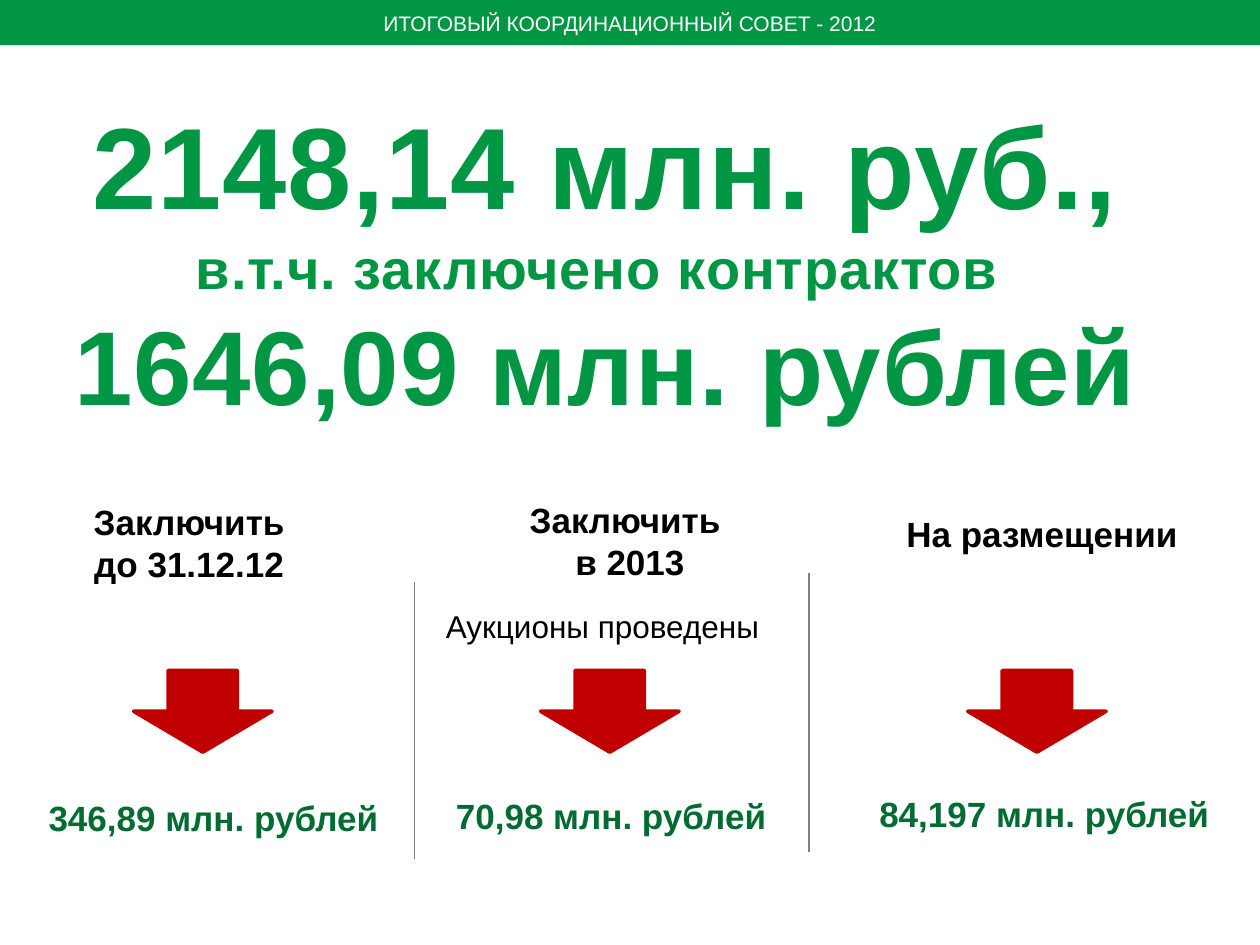
from lxml import etree
from pptx import Presentation
from pptx.dml.color import RGBColor
from pptx.enum.shapes import MSO_CONNECTOR, MSO_SHAPE
from pptx.enum.text import MSO_ANCHOR, MSO_AUTO_SIZE, PP_ALIGN
from pptx.oxml.ns import qn
from pptx.util import Inches, Pt

LEFT, CENTER = PP_ALIGN.LEFT, PP_ALIGN.CENTER
TOP, MIDDLE = MSO_ANCHOR.TOP, MSO_ANCHOR.MIDDLE
FIT_SHAPE, FIT_NONE = MSO_AUTO_SIZE.SHAPE_TO_FIT_TEXT, MSO_AUTO_SIZE.NONE
RECTANGLE, DOWN_ARROW = MSO_SHAPE.RECTANGLE, MSO_SHAPE.DOWN_ARROW
STRAIGHT = MSO_CONNECTOR.STRAIGHT

FONT = "Arial"
COLORS = {
    "green": "009644",
    "dark_green": "006C31",
    "red": "C00000",
    "gray": "808080",
    "black": "000000",
    "white": "FFFFFF",
}


def rgb(name):
    return RGBColor.from_string(COLORS[name])


def write(box, lines, color, bold=True, align=CENTER, anchor=TOP, fit=FIT_SHAPE, wrap=True):
    """Fill a box with (text, size) lines and return the spans."""
    frame = box.text_frame
    frame.auto_size = fit
    frame.word_wrap = wrap
    frame.vertical_anchor = anchor
    spans = []
    for index, (text, size) in enumerate(lines):
        para = frame.add_paragraph() if index else frame.paragraphs[0]
        para.alignment = align
        span = para.add_run()
        span.text = text
        span.font.name = FONT
        span.font.size = Pt(size)
        span.font.bold = bold
        span.font.color.rgb = rgb(color)
        spans.append(span)
    return spans


deck = Presentation()
deck.slide_width, deck.slide_height = Inches(10), Inches(7.5)
page = deck.slides.add_slide(deck.slide_layouts[5])

# Header band
band = page.shapes.add_shape(RECTANGLE, 0, 0, Inches(10), Inches(0.36))
band.shadow.inherit = False
band.fill.solid()
band.fill.fore_color.rgb = rgb("green")
band.line.fill.background()
write(band, [("ИТОГОВЫЙ КООРДИНАЦИОННЫЙ СОВЕТ - 2012", 12)], "white",
      bold=False, anchor=MIDDLE, fit=FIT_NONE, wrap=False)

# Headline totals
title = page.shapes.title
title.left, title.top = Inches(0), Inches(0.7)
title.width, title.height = Inches(9.61), Inches(2.76)
headline = [
    ("2148,14 млн. руб.,", 66),
    ("в.т.ч. заключено контрактов ", 32),
    ("1646,09 млн. рублей", 60),
]
for span in write(title, headline, "green"):
    span.font._element.set("spc", "50")

# Column headings, note and amounts: place, lines, size, colour, bold, alignment
texts = [
    ((0.52, 3.92, 2.04, 0.77), ["Заключить ", "до 31.12.12 "], 20, "black", True, CENTER),
    ((3.98, 3.91, 2.04, 0.77), ["Заключить ", "в 2013"], 20, "black", True, CENTER),
    ((7.05, 4.02, 2.44, 0.44), ["На размещении"], 20, "black", True, CENTER),
    ((3.44, 4.77, 2.83, 0.4), ["Аукционы проведены"], 18, "black", False, LEFT),
    ((0.28, 6.27, 2.83, 0.44), ["346,89 млн. рублей"], 20, "dark_green", True, CENTER),
    ((3.52, 6.26, 2.83, 0.44), ["70,98 млн. рублей"], 20, "dark_green", True, LEFT),
    ((6.88, 6.24, 2.95, 0.74), ["84,197 млн. рублей"], 20, "dark_green", True, LEFT),
]
for place, lines, size, color, bold, align in texts:
    box = page.shapes.add_textbox(*map(Inches, place))
    write(box, [(line, size) for line in lines], color, bold, align)

# Column dividers
for x, top, bottom in [(3.29, 4.62, 6.82), (6.42, 4.55, 6.76)]:
    divider = page.shapes.add_connector(
        STRAIGHT, Inches(x), Inches(top), Inches(x), Inches(bottom))
    divider.line.color.rgb = rgb("gray")
    divider.line.width = Pt(0.75)
    etree.SubElement(divider._element.spPr, qn("a:effectLst"))

# Arrows down to the amounts
for x in (1.06, 4.29, 7.68):
    arrow = page.shapes.add_shape(
        DOWN_ARROW, Inches(x), Inches(5.32), Inches(1.1), Inches(0.65))
    arrow.shadow.inherit = False
    arrow.fill.solid()
    arrow.fill.fore_color.rgb = rgb("red")
    arrow.line.color.rgb = rgb("red")
    arrow.line.width = Pt(2)

deck.save("out.pptx")
